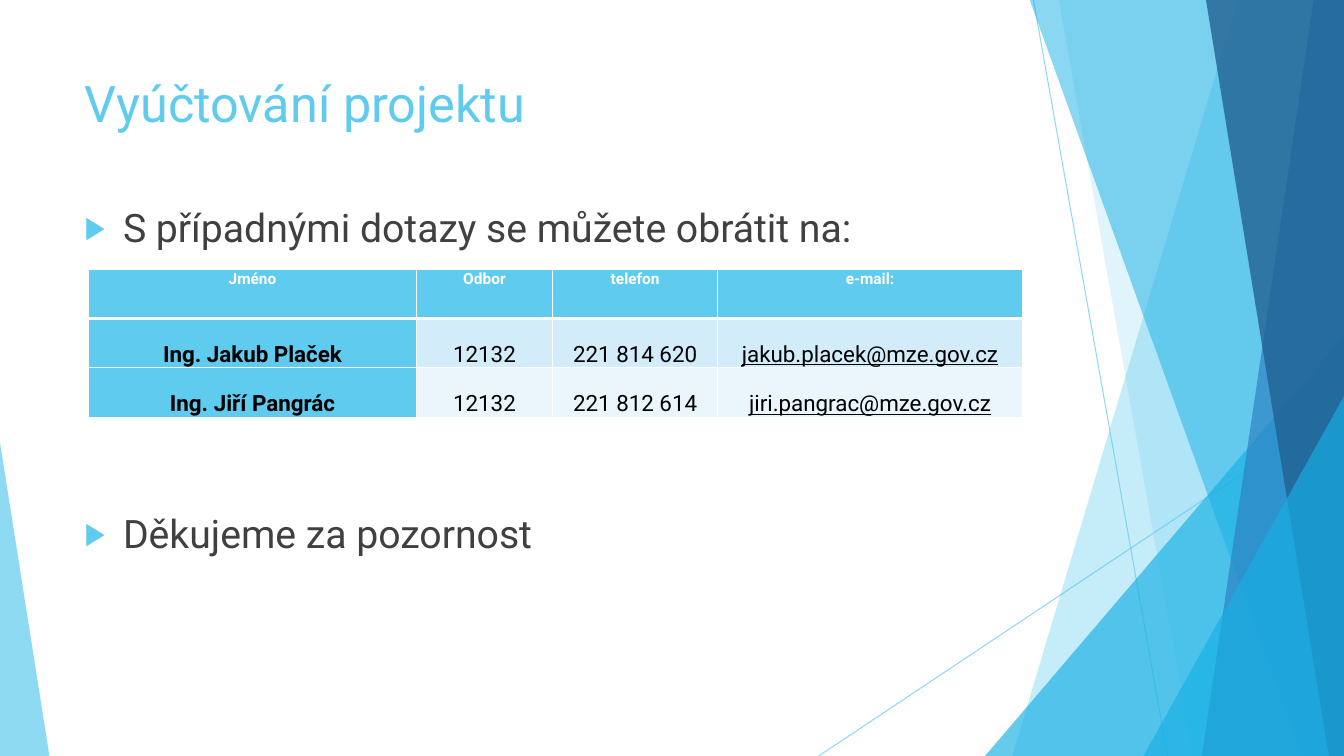
from lxml import etree
from pptx import Presentation
from pptx import util as u
from pptx.dml.color import RGBColor
from pptx.enum import shapes, text
from pptx.oxml import ns

PX = 9144  # EMU; 100 px to the inch
FONT = "Roboto"
SKY = RGBColor(0x5F, 0xCB, 0xEF)
CYAN = RGBColor(0x17, 0xB0, 0xE4)
BLUE = RGBColor(0x2E, 0x83, 0xC3)
NAVY = RGBColor(0x22, 0x62, 0x92)
PALE = RGBColor(0xD2, 0xEC, 0xF9)
PALER = RGBColor(0xEA, 0xF6, 0xFC)
GREY = RGBColor(0x40, 0x40, 0x40)
WHITE = RGBColor(0xFF, 0xFF, 0xFF)
BLACK = RGBColor(0, 0, 0)

RIGHT, TOP, BOTTOM = 1333, -1, 750
COLUMNS = [325, 135, 164, 302]
ROW_HEIGHT = 49
HEADINGS = ["Jméno", "Odbor", "telefon", "e-mail:"]
CONTACTS = [
    ["Ing. Jakub Plaček", "12132", "221 814 620", "jakub.placek@mze.gov.cz"],
    ["Ing. Jiří Pangrác", "12132", "221 812 614", "jiri.pangrac@mze.gov.cz"],
]


def px(*lengths):
    return [u.Emu(length * PX) for length in lengths]


def add_element(parent, tag, **attributes):
    child = etree.SubElement(parent, ns.qn(tag))
    for name, value in attributes.items():
        child.set(name, str(value))
    return child


def set_alpha(properties, percent):
    """Make the first solid colour under the properties translucent."""
    colour = next(properties.iter(ns.qn("a:srgbClr")))
    add_element(colour, "a:alpha", val=percent * 1000)


def write(paragraph, words, size, color, bold=False, underline=False):
    run = paragraph.add_run()
    run.text = words
    font = run.font
    font.name, font.size = FONT, u.Pt(size)
    font.bold, font.underline = bold, underline
    font.color.rgb = color


def paint(facet, color, opacity):
    facet.shadow.inherit = False
    facet.fill.solid()
    facet.fill.fore_color.rgb = color
    facet.line.fill.background()
    set_alpha(facet.element.spPr, opacity)


def add_band(slide, top_left, bottom_left, color, opacity):
    """Draw a band from a slanted left edge to the right slide edge."""
    builder = slide.shapes.build_freeform(top_left, TOP, scale=PX)
    builder.add_line_segments(
        [(RIGHT, TOP), (RIGHT, BOTTOM), (bottom_left, BOTTOM)], close=True)
    paint(builder.convert_to_shape(), color, opacity)


def add_corner(slide, left, top, width, apex, color, opacity):
    """Draw a triangle that stands on the bottom slide edge."""
    corner = slide.shapes.add_shape(
        shapes.MSO_SHAPE.ISOSCELES_TRIANGLE,
        *px(left, top, width, BOTTOM - top))
    corner.adjustments[0] = apex
    paint(corner, color, opacity)


def add_hairline(slide, *ends):
    hairline = slide.shapes.add_connector(
        shapes.MSO_CONNECTOR.STRAIGHT, *px(*ends))
    hairline.line.color.rgb = SKY
    hairline.line.width = u.Pt(0.75)
    properties = hairline.element.spPr
    set_alpha(properties, 70)
    add_element(properties, "a:effectLst")


def add_backdrop(slide):
    add_hairline(slide, 1025, 0, 1158, 750)
    add_hairline(slide, 1333, 403, 812, 750)
    add_band(slide, 1228, 1004, SKY, 36)
    add_band(slide, 1050, 1183, SKY, 20)
    add_corner(slide, 977, 333, 356, 1, CYAN, 66)
    add_band(slide, 1021, 1291, CYAN, 50)
    add_band(slide, 1303, 1192, BLUE, 70)
    add_band(slide, 1196, 1318, NAVY, 80)
    add_corner(slide, 1134, 393, 199, 1, CYAN, 66)
    add_corner(slide, 0, 439, 49, 0, SKY, 70)


def place(holder, *box):
    holder.left, holder.top, holder.width, holder.height = px(*box)
    frame = holder.text_frame
    frame.word_wrap = True
    frame.auto_size = text.MSO_AUTO_SIZE.NONE
    frame.vertical_anchor = text.MSO_ANCHOR.TOP
    return frame


def write_bullet(paragraph, words, space_before):
    paragraph.space_before = u.Pt(space_before)
    properties = paragraph._p.get_or_add_pPr()
    indent = 38 * PX
    properties.set("marL", str(indent))
    properties.set("indent", str(-indent))
    add_element(add_element(properties, "a:buClr"), "a:srgbClr", val=SKY)
    add_element(properties, "a:buSzPct", val=80000)
    add_element(properties, "a:buChar", char="▶")
    write(paragraph, words, 28, GREY)


def add_border(cell, side, points):
    edge = add_element(cell._tc.get_or_add_tcPr(), "a:ln" + side,
                       w=u.Pt(points))
    add_element(add_element(edge, "a:solidFill"), "a:srgbClr", val=WHITE)


def fill_cell(cell, words, fill, anchor, bottom_border, **text_format):
    for side in "LRT":
        add_border(cell, side, 1)
    add_border(cell, "B", bottom_border)
    cell.fill.solid()
    cell.fill.fore_color.rgb = fill
    cell.vertical_anchor = anchor
    cell.margin_left, cell.margin_right = px(7, 7)
    cell.margin_top = cell.margin_bottom = 0
    paragraph = cell.text_frame.paragraphs[0]
    paragraph.alignment = text.PP_ALIGN.CENTER
    paragraph.line_spacing = 1.07
    write(paragraph, words, **text_format)


def add_contacts(slide):
    row_count = len(CONTACTS) + 1
    contacts = slide.shapes.add_table(
        row_count, len(COLUMNS),
        *px(88, 267, sum(COLUMNS), ROW_HEIGHT * row_count)).table
    contacts.first_row = contacts.horz_banding = False
    for column, width in zip(contacts.columns, px(*COLUMNS)):
        column.width = width
    for column, heading in enumerate(HEADINGS):
        fill_cell(contacts.cell(0, column), heading, SKY, text.MSO_ANCHOR.TOP,
                  3, size=11, color=WHITE, bold=True)
    for row, (contact, tint) in enumerate(zip(CONTACTS, (PALE, PALER)), 1):
        for column, detail in enumerate(contact):
            is_name = column == 0
            fill_cell(contacts.cell(row, column), detail,
                      SKY if is_name else tint, text.MSO_ANCHOR.BOTTOM, 1,
                      size=16, color=BLACK, bold=is_name,
                      underline="@" in detail)


def main():
    deck = Presentation()
    deck.slide_width, deck.slide_height = px(RIGHT, BOTTOM)
    slide = deck.slides.add_slide(deck.slide_layouts[1])
    add_backdrop(slide)

    heading = place(slide.shapes.title, 74, 67, 940, 144).paragraphs[0]
    heading.alignment = text.PP_ALIGN.LEFT
    write(heading, "Vyúčtování projektu", 36, SKY)

    body = place(slide.placeholders[1], 74, 197, 940, 464)
    write_bullet(body.paragraphs[0],
                 "S případnými dotazy se můžete obrátit na:", 10)
    write_bullet(body.add_paragraph(), "Děkujeme za pozornost", 185)

    add_contacts(slide)
    deck.save("out.pptx")


if __name__ == "__main__":
    main()
